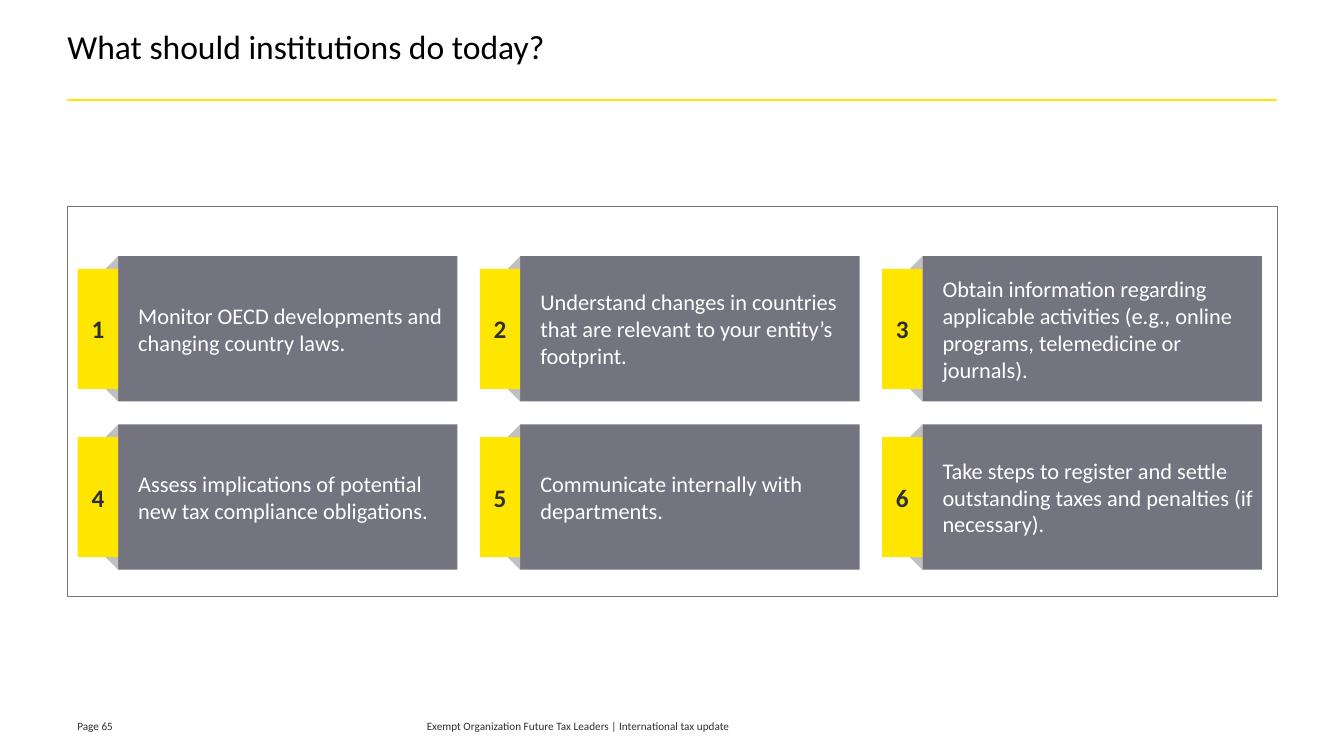
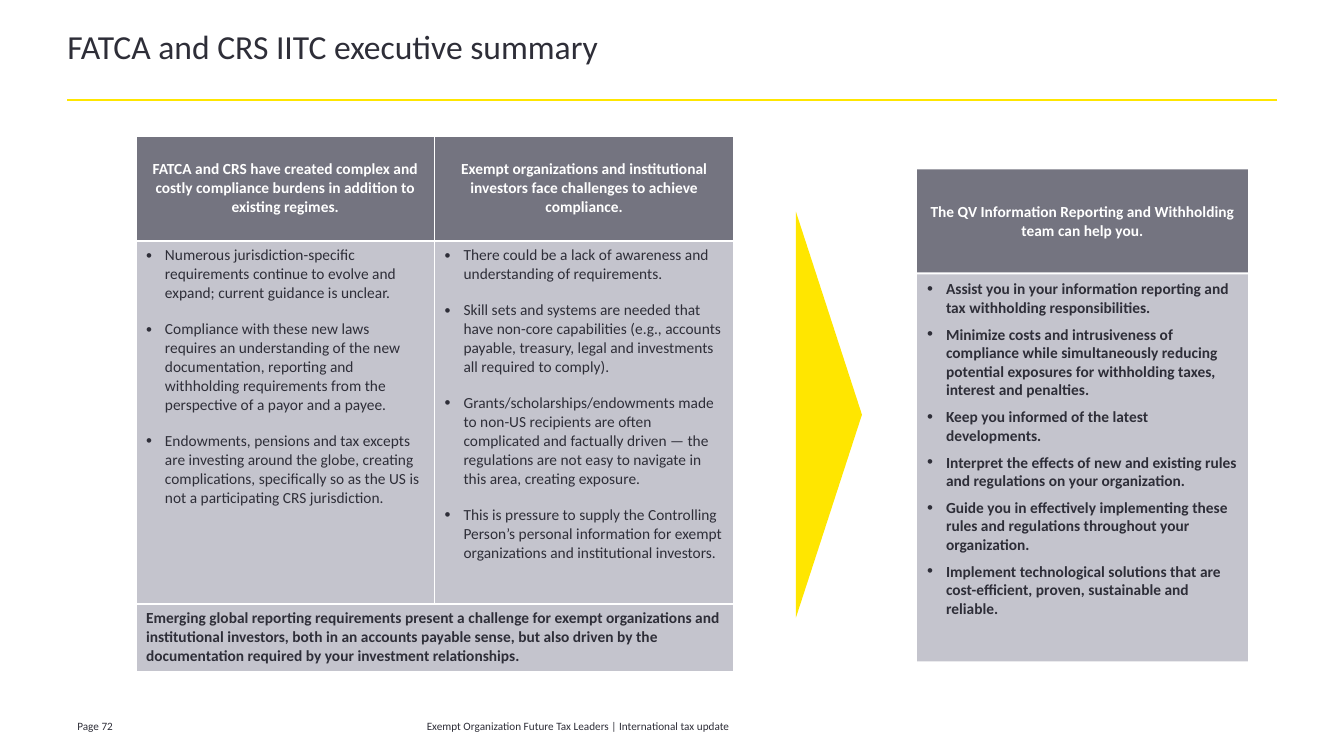
from lxml.etree import SubElement
from pptx import Presentation
from pptx.dml.color import RGBColor
from pptx.enum.shapes import MSO_CONNECTOR, MSO_SHAPE as SHAPE
from pptx.enum.text import MSO_ANCHOR as ANCHOR, MSO_AUTO_SIZE, PP_ALIGN as ALIGN
from pptx.oxml import parse_xml
from pptx.oxml.ns import nsdecls, qn
from pptx.util import Pt

BLACK = RGBColor(0x00, 0x00, 0x00)
WHITE = RGBColor(0xFF, 0xFF, 0xFF)
INK = RGBColor(0x2E, 0x2E, 0x38)
YELLOW = RGBColor(0xFF, 0xE6, 0x00)
GRAY = RGBColor(0x74, 0x74, 0x80)
PALE = RGBColor(0xC4, 0xC4, 0xCD)
SILVER = RGBColor(0xC0, 0xC0, 0xC0)

LEFT, CONTENT_WIDTH = 48.2, 864.5
FOOTER_TEXT = "Exempt Organization Future Tax Leaders | International tax update"
TITLE_ONLY, TITLE_AND_BODY = 5, 1
PLAIN_FRAME = {"auto_size": MSO_AUTO_SIZE.NONE, "word_wrap": True, "vertical_anchor": ANCHOR.TOP}


def text_style(size, colour, bold=False, align=ALIGN.LEFT, frame=None, bullet=False, before=0, **paragraph):
    """Collect the format values of one kind of text."""
    return {
        "font": {"name": "Calibri", "size": Pt(size), "bold": bold},
        "colour": colour,
        "frame": {**PLAIN_FRAME, **(frame or {})},
        "paragraph": {"alignment": align, "space_before": Pt(0), "space_after": Pt(0), **paragraph},
        "bullet": bullet,
        "before": Pt(before),
    }


MIDDLE = {"vertical_anchor": ANCHOR.MIDDLE}
NO_INSETS = {f"margin_{side}": Pt(0) for side in ("left", "top", "right", "bottom")}
CARD_FRAME = {**MIDDLE, "margin_left": Pt(14.4), "margin_top": Pt(5.8),
              "margin_right": Pt(5.8), "margin_bottom": Pt(5.8)}

TITLE = text_style(24, INK, frame=NO_INSETS, line_spacing=0.85)
FOOTER = text_style(8, INK)
FOOTER_CENTRED = text_style(8, INK, align=ALIGN.CENTER)
CARD = text_style(16, WHITE, frame=CARD_FRAME)
NUMBER = text_style(18, INK, bold=True, align=ALIGN.CENTER, frame=MIDDLE)
HEADER = text_style(11, WHITE, bold=True, align=ALIGN.CENTER, frame=MIDDLE)
BULLETS = text_style(11, INK, bullet=True, before=12)
BOLD_BULLETS = text_style(11, INK, bold=True, bullet=True, before=6)
CONCLUSION = text_style(11, INK, bold=True)


def apply(target, values):
    for name, value in values.items():
        setattr(target, name, value)


class Deck:
    """Holds the presentation, its shared style and the current slide."""

    def __init__(self):
        self.presentation = Presentation()
        apply(self.presentation, {"slide_width": Pt(960.5), "slide_height": Pt(540)})
        self.slide = None

    def add_slide(self, title, page, layout=TITLE_ONLY, title_colour=INK):
        layouts = self.presentation.slide_layouts
        self.slide = self.presentation.slides.add_slide(layouts[layout])
        self.place(self.slide.shapes.title, LEFT, 23, CONTENT_WIDTH, 46.8)
        self.fill_text(self.slide.shapes.title.text_frame, [title], {**TITLE, "colour": title_colour})
        self.rule(LEFT, 71.4, LEFT + CONTENT_WIDTH)
        self.text(LEFT, 510, 52.6, 14.4, f"Page {page}", FOOTER)
        self.text(254.9, 510, 316.8, 14.4, FOOTER_TEXT, FOOTER_CENTRED)

    def place(self, shape, left, top, width, height):
        apply(shape, {"left": Pt(left), "top": Pt(top), "width": Pt(width), "height": Pt(height)})

    def fill_text(self, frame, texts, style):
        apply(frame, style["frame"])
        for index, text in enumerate(texts):
            paragraph = frame.add_paragraph() if index else frame.paragraphs[0]
            paragraph.text = text
            if style["bullet"]:
                self.bullet(paragraph, style["colour"])
            apply(paragraph, style["paragraph"])
            if index:
                paragraph.space_before = style["before"]
            apply(paragraph.font, style["font"])
            paragraph.font.color.rgb = style["colour"]

    def bullet(self, paragraph, colour):
        properties = paragraph._p.get_or_add_pPr()
        properties.set("marL", str(Pt(13.5)))
        properties.set("indent", str(-Pt(13.5)))
        bullet_colour = SubElement(properties, qn("a:buClr"))
        SubElement(bullet_colour, qn("a:srgbClr")).set("val", str(colour))
        SubElement(properties, qn("a:buSzPct")).set("val", "110000")
        SubElement(properties, qn("a:buFont")).set("typeface", "Arial")
        SubElement(properties, qn("a:buChar")).set("char", "•")

    def text(self, left, top, width, height, text, style):
        box = self.slide.shapes.add_textbox(Pt(left), Pt(top), Pt(width), Pt(height))
        self.fill_text(box.text_frame, [text], style)

    def paint(self, shape, fill):
        shape.shadow.inherit = False
        shape.fill.solid()
        shape.fill.fore_color.rgb = fill
        shape.line.fill.background()

    def box(self, left, top, width, height, fill, text=None, style=None, kind=SHAPE.RECTANGLE):
        shape = self.slide.shapes.add_shape(kind, Pt(left), Pt(top), Pt(width), Pt(height))
        self.paint(shape, fill)
        if text:
            self.fill_text(shape.text_frame, [text], style)
        return shape

    def outline(self, left, top, width, height):
        shape = self.box(left, top, width, height, WHITE)
        shape.fill.background()
        shape.line.color.rgb = GRAY
        shape.line.width = Pt(0.75)

    def fold(self, left, top, size, apex):
        shape = self.box(left, top, size, size, SILVER, kind=SHAPE.ISOSCELES_TRIANGLE)
        shape.rotation = 270
        shape.adjustments[0] = apex

    def rule(self, left, top, right):
        line = self.slide.shapes.add_connector(
            MSO_CONNECTOR.STRAIGHT, Pt(left), Pt(top), Pt(right), Pt(top))
        line.line.color.rgb = YELLOW
        line.line.width = Pt(1.5)
        SubElement(line._element.spPr, qn("a:effectLst"))

    def pointer(self, left, top, width, height):
        builder = self.slide.shapes.build_freeform(Pt(left), Pt(top))
        builder.add_line_segments([(Pt(left), Pt(top + height)),
                                   (Pt(left + width), Pt(top + height / 2))])
        self.paint(builder.convert_to_shape(), YELLOW)

    def body(self, left, top, width, height, texts, style, fill):
        placeholder = self.slide.placeholders[1]
        self.place(placeholder, left, top, width, height)
        placeholder.fill.solid()
        placeholder.fill.fore_color.rgb = fill
        self.fill_text(placeholder.text_frame, texts, style)

    def table(self, left, top, widths, heights):
        frame = self.slide.shapes.add_table(
            len(heights), len(widths), Pt(left), Pt(top), Pt(sum(widths)), Pt(sum(heights)))
        table = frame.table
        apply(table, {"first_row": False, "horz_banding": False})
        for column, width in zip(table.columns, widths):
            column.width = Pt(width)
        for row, height in zip(table.rows, heights):
            row.height = Pt(height)
        return table

    def cell(self, cell, texts, style, fill):
        cell.fill.solid()
        cell.fill.fore_color.rgb = fill
        cell.vertical_anchor = style["frame"]["vertical_anchor"]
        self.fill_text(cell.text_frame, texts, {**style, "frame": {}})
        properties = cell._tc.get_or_add_tcPr()
        for index, side in enumerate("LRTB"):
            properties.insert(index, parse_xml(
                f'<a:ln{side} {nsdecls("a")} w="{Pt(1)}"><a:solidFill>'
                f'<a:srgbClr val="{WHITE}"/></a:solidFill></a:ln{side}>'))


STEPS = [
    "Monitor OECD developments and changing country laws.",
    "Understand changes in countries that are relevant to your entity’s footprint.",
    "Obtain information regarding applicable activities (e.g., online programs, "
    "telemedicine or journals).",
    "Assess implications of potential new tax compliance obligations.",
    "Communicate internally with departments.",
    "Take steps to register and settle outstanding taxes and penalties (if necessary).",
]

HEADERS = [
    "FATCA and CRS have created complex and costly compliance burdens in addition to "
    "existing regimes.",
    "Exempt organizations and institutional investors face challenges to achieve compliance.",
]
BURDENS = [
    "Numerous jurisdiction-specific requirements continue to evolve and expand; current "
    "guidance is unclear.",
    "Compliance with these new laws requires an understanding of the new documentation, "
    "reporting and withholding requirements from the perspective of a payor and a payee.",
    "Endowments, pensions and tax excepts are investing around the globe, creating "
    "complications, specifically so as the US is not a participating CRS jurisdiction.",
]
CHALLENGES = [
    "There could be a lack of awareness and understanding of requirements.",
    "Skill sets and systems are needed that have non-core capabilities (e.g., accounts "
    "payable, treasury, legal and investments all required to comply).",
    "Grants/scholarships/endowments made to non-US recipients are often complicated and "
    "factually driven — the regulations are not easy to navigate in this area, creating exposure.",
    "This is pressure to supply the Controlling Person’s personal information for exempt "
    "organizations and institutional investors.",
]
SUMMARY = (
    "Emerging global reporting requirements present a challenge for exempt organizations and "
    "institutional investors, both in an accounts payable sense, but also driven by the "
    "documentation required by your investment relationships."
)
SERVICES = [
    "Assist you in your information reporting and tax withholding responsibilities.",
    "Minimize costs and intrusiveness of compliance while simultaneously reducing potential "
    "exposures for withholding taxes, interest and penalties.",
    "Keep you informed of the latest developments.",
    "Interpret the effects of new and existing rules and regulations on your organization.",
    "Guide you in effectively implementing these rules and regulations throughout your "
    "organization.",
    "Implement technological solutions that are cost-efficient, proven, sustainable and reliable.",
]


def build_steps(deck):
    deck.add_slide("What should institutions do today?", 65, title_colour=BLACK)
    deck.outline(LEFT, 147.6, CONTENT_WIDTH, 278.6)

    # Six numbered cards in three columns, each with a folded tab
    card_width, card_height, tab_width, fold = 242.6, 103.8, 28.8, 9
    for index, step in enumerate(STEPS):
        row, column = divmod(index, 3)
        left, top = 84.4 + column * 287.4, 183 + row * 120.2
        bottom = top + card_height
        deck.box(left, top, card_width, card_height, GRAY, step, CARD)
        deck.fold(left - fold, top, fold, 0)
        deck.fold(left - fold, bottom - fold, fold, 1)
        deck.box(left - tab_width, top + fold, tab_width, card_height - 2 * fold,
                 YELLOW, str(index + 1), NUMBER)


def build_summary(deck):
    deck.add_slide("FATCA and CRS IITC executive summary", 72, layout=TITLE_AND_BODY)

    # Burdens and challenges
    table = deck.table(97.2, 97.2, [213.4, 213.8], [74.9, 259.4, 47.5])
    for column, (header, points) in enumerate(zip(HEADERS, [BURDENS, CHALLENGES])):
        deck.cell(table.cell(0, column), [header], HEADER, GRAY)
        deck.cell(table.cell(1, column), points, BULLETS, PALE)
    table.cell(2, 0).merge(table.cell(2, 1))
    deck.cell(table.cell(2, 0), [SUMMARY], CONCLUSION, PALE)

    # Pointer to the services offered
    deck.pointer(568.8, 151.2, 47.2, 290)
    panel_left, panel_width = 655.4, 236.4
    deck.body(panel_left, 196, panel_width, 276.5, SERVICES, BOLD_BULLETS, PALE)
    deck.box(panel_left, 121, panel_width, 73.6, GRAY,
             "The QV Information Reporting and Withholding team can help you.", HEADER)


def main():
    deck = Deck()
    build_steps(deck)
    build_summary(deck)
    deck.presentation.save("out.pptx")


if __name__ == "__main__":
    main()
